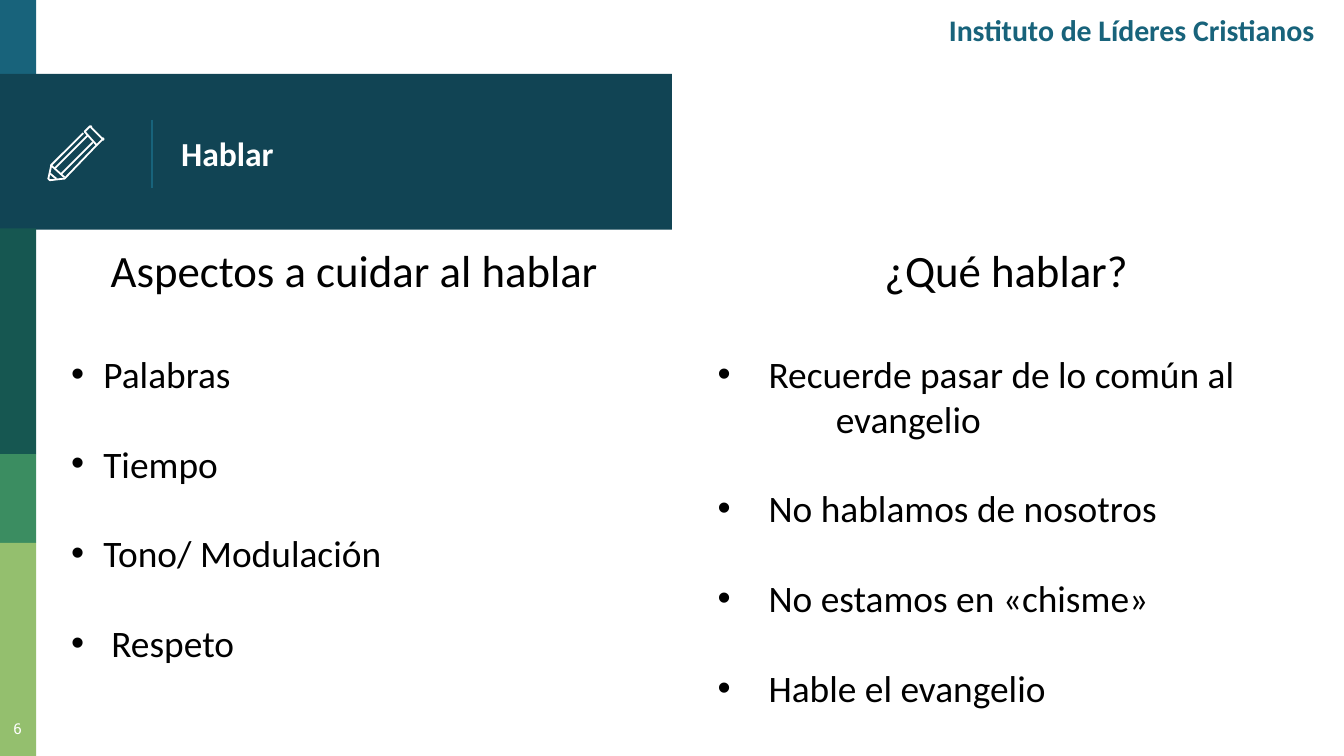
from typing import NamedTuple

from lxml.etree import SubElement
from pptx import Presentation
from pptx.dml.color import RGBColor
from pptx.enum.shapes import MSO_CONNECTOR, MSO_SHAPE
from pptx.enum.text import MSO_ANCHOR, PP_ALIGN
from pptx.oxml.ns import qn
from pptx.util import Inches, Pt

COLORS = {
    "blue": "18637B",
    "navy": "114454",
    "teal": "165751",
    "green": "3B8D61",
    "lime": "94BF6E",
    "white": "FFFFFF",
    "black": "000000",
}


class Box(NamedTuple):
    left: float
    top: float
    width: float
    height: float


class Band(NamedTuple):
    box: Box
    color: str


class Label(NamedTuple):
    text: str
    box: Box
    size: float
    color: str
    align: PP_ALIGN = PP_ALIGN.LEFT
    anchor: MSO_ANCHOR = MSO_ANCHOR.MIDDLE
    bold: bool = False
    font: str = "Calibri"
    top_inset: float = 0.1


class Item(NamedTuple):
    text: str
    margin: float
    bulleted: bool = True


class Column(NamedTuple):
    heading: str
    box: Box
    items: list[Item]


class Outline(NamedTuple):
    """Points are in hundredths of an inch."""
    points: list[tuple[int, int]]
    closed: bool


BANDS = [
    Band(Box(0, 0, 0.27, 0.58), "blue"),
    Band(Box(0, 0.55, 5, 1.16), "navy"),
    Band(Box(0, 1.7, 0.27, 1.68), "teal"),
    Band(Box(0, 3.38, 0.27, 0.66), "green"),
    Band(Box(0, 4.04, 0.27, 1.59), "lime"),
]
LABELS = [
    Label("Hablar", Box(1.25, 0.58, 3.75, 1.12), 18, "white", bold=True),
    Label("6", Box(-0.06, 5.27, 0.38, 0.35), 8, "white", PP_ALIGN.CENTER,
          MSO_ANCHOR.TOP, font="Roboto Slab", top_inset=0.13),
    Label("Instituto de Líderes Cristianos", Box(6.18, 0.06, 3.7, 0.61), 16, "blue",
          PP_ALIGN.RIGHT, MSO_ANCHOR.TOP, bold=True, top_inset=0.03),
]
COLUMNS = [
    Column("¿Qué hablar?", Box(5.24, 1.71, 4.49, 3.3), [
        Item("Recuerde pasar de lo común al", 0.38),
        Item("evangelio", 0.88, bulleted=False),
        Item("No hablamos de nosotros", 0.38),
        Item("No estamos en «chisme»", 0.38),
        Item("Hable el evangelio", 0.38),
    ]),
    Column("Aspectos a cuidar al hablar", Box(0.43, 1.71, 4.41, 3.3), [
        Item("Palabras", 0.24),
        Item("Tiempo", 0.24),
        Item("Tono/ Modulación", 0.24),
        Item("Respeto", 0.3),
    ]),
]
PENCIL_OUTLINES = [
    Outline([(76, 103), (68, 95), (68, 94), (67, 94), (66, 95), (63, 98),
             (72, 108), (76, 104), (77, 104), (77, 103)], True),
    Outline([(62, 99), (38, 123), (38, 124), (36, 133), (37, 134), (38, 134),
             (47, 133), (48, 133), (72, 108)], False),
]
PENCIL_LINES = [
    (0.69, 1.06, 0.45, 1.3),
    (0.41, 1.25, 0.65, 1.01),
    (0.42, 1.33, 0.37, 1.29),
    (0.38, 1.23, 0.48, 1.32),
]


def rgb(name: str) -> RGBColor:
    return RGBColor.from_string(COLORS[name])


def add_band(shapes, band: Band) -> None:
    shape = shapes.add_shape(MSO_SHAPE.RECTANGLE, *map(Inches, band.box))
    shape.shadow.inherit = False
    shape.fill.solid()
    shape.fill.fore_color.rgb = rgb(band.color)
    shape.line.fill.background()


def add_line(shapes, ends: tuple, color: str, width: float) -> None:
    connector = shapes.add_connector(MSO_CONNECTOR.STRAIGHT, *map(Inches, ends))
    connector.line.color.rgb = rgb(color)
    connector.line.width = Pt(width)
    SubElement(connector._element.spPr, qn("a:effectLst"))


def add_outline(shapes, outline: Outline) -> None:
    start, *rest = outline.points
    builder = shapes.build_freeform(*start, scale=Inches(0.01))
    builder.add_line_segments(rest, close=outline.closed)
    shape = builder.convert_to_shape()
    shape.shadow.inherit = False
    shape.fill.background()
    shape.line.color.rgb = rgb("white")
    shape.line.width = Pt(0.96)


def add_text_frame(shapes, box: Box, anchor: MSO_ANCHOR, top_inset: float = 0.1):
    frame = shapes.add_textbox(*map(Inches, box)).text_frame
    frame.word_wrap = True
    frame.vertical_anchor = anchor
    frame.margin_left = frame.margin_right = frame.margin_bottom = Inches(0.1)
    frame.margin_top = Inches(top_inset)
    return frame


def write(paragraph, text: str, size: float, color: str, font: str = "Calibri",
          bold: bool = False) -> None:
    paragraph.text = text
    paragraph.font.size = Pt(size)
    paragraph.font.name = font
    paragraph.font.bold = bold
    paragraph.font.color.rgb = rgb(color)


def add_label(shapes, label: Label) -> None:
    frame = add_text_frame(shapes, label.box, label.anchor, label.top_inset)
    paragraph = frame.paragraphs[0]
    paragraph.alignment = label.align
    write(paragraph, label.text, label.size, label.color, label.font, label.bold)


def set_indent(paragraph, item: Item) -> None:
    """Hang the bullet at the box edge, or indent a continuation line."""
    properties = paragraph._p.get_or_add_pPr()
    properties.set("marL", str(Inches(item.margin)))
    properties.set("indent", str(-Inches(item.margin) if item.bulleted else 0))
    if item.bulleted:
        SubElement(properties, qn("a:buFont"), typeface="Arial")
        SubElement(properties, qn("a:buChar"), char="•")
    else:
        SubElement(properties, qn("a:buNone"))


def add_column(shapes, column: Column) -> None:
    frame = add_text_frame(shapes, column.box, MSO_ANCHOR.TOP)
    heading = frame.paragraphs[0]
    heading.alignment = PP_ALIGN.CENTER
    write(heading, column.heading, 24, "black")
    for index, item in enumerate(column.items):
        paragraph = frame.add_paragraph()
        if item.bulleted:
            paragraph.space_before = Pt(24 if index else 29)
        set_indent(paragraph, item)
        write(paragraph, item.text, 20, "black")


def main() -> None:
    presentation = Presentation()
    presentation.slide_width = Inches(10)
    presentation.slide_height = Inches(10) * 9 // 16
    slide = presentation.slides.add_slide(presentation.slide_layouts[6])
    shapes = slide.shapes
    for band in BANDS:
        add_band(shapes, band)
    add_line(shapes, (1.13, 0.89, 1.13, 1.4), "blue", 0.75)
    pencil = shapes.add_group_shape().shapes
    for outline in PENCIL_OUTLINES:
        add_outline(pencil, outline)
    for ends in PENCIL_LINES:
        add_line(pencil, ends, "white", 0.96)
    for label in LABELS:
        add_label(shapes, label)
    for column in COLUMNS:
        add_column(shapes, column)
    presentation.save("out.pptx")


if __name__ == "__main__":
    main()
